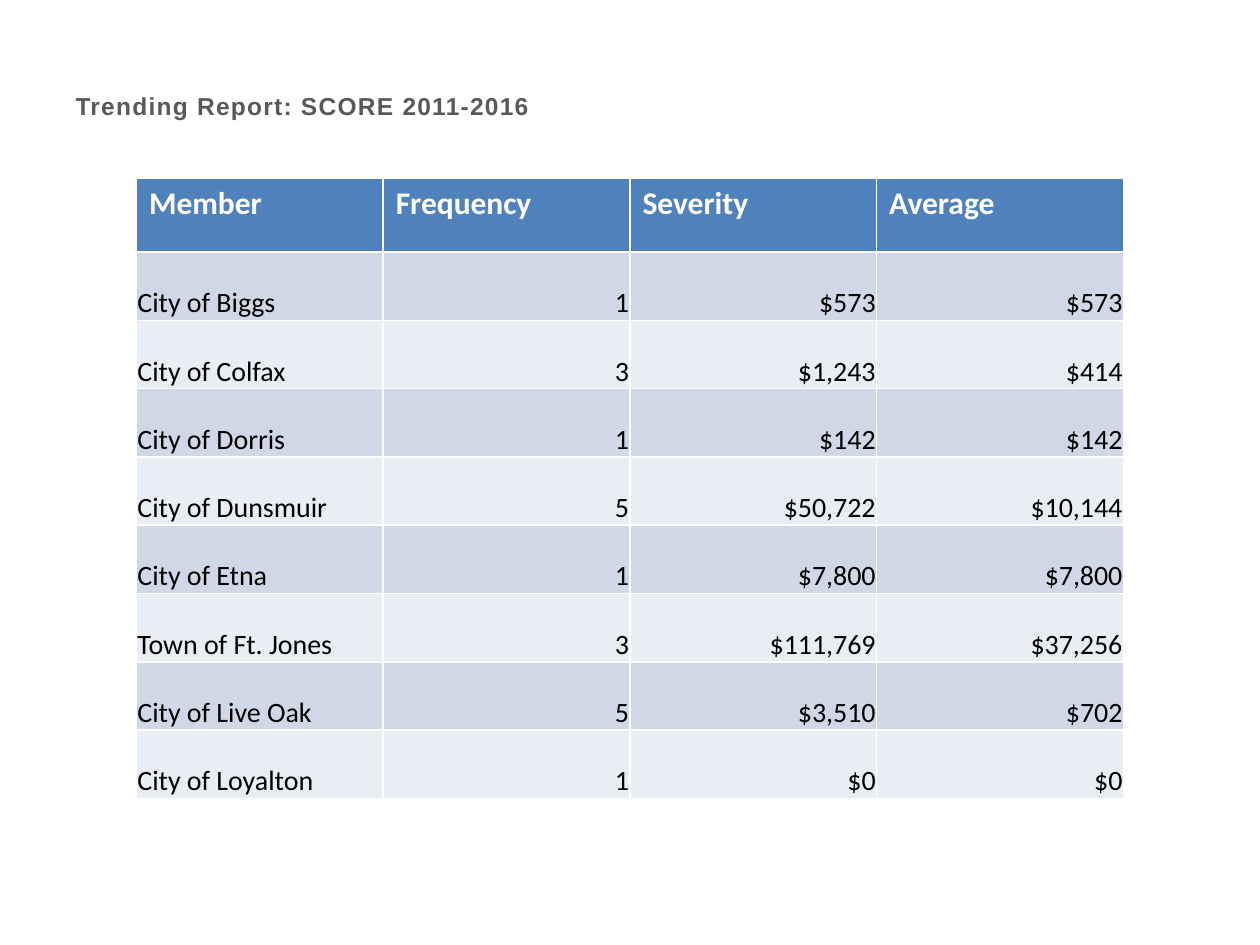
from dataclasses import dataclass

from pptx import Presentation
from pptx.dml.color import RGBColor
from pptx.enum.text import MSO_ANCHOR, PP_ALIGN
from pptx.util import Cm, Pt


@dataclass(frozen=True)
class Theme:
    title_font: str = "Arial"
    table_font: str = "Calibri"
    title_size: int = 14
    header_size: int = 18
    body_size: int = 16
    title_color: str = "595959"
    header_color: str = "FFFFFF"
    body_color: str = "000000"
    header_fill: str = "4F81BD"
    band_fills: tuple = ("D0D8E8", "E9EDF4")


THEME = Theme()
HEADERS = ("Member", "Frequency", "Severity", "Average")
MEMBERS = (
    ("City of Biggs", "1", "$573", "$573"),
    ("City of Colfax", "3", "$1,243", "$414"),
    ("City of Dorris", "1", "$142", "$142"),
    ("City of Dunsmuir", "5", "$50,722", "$10,144"),
    ("City of Etna", "1", "$7,800", "$7,800"),
    ("Town of Ft. Jones", "3", "$111,769", "$37,256"),
    ("City of Live Oak", "5", "$3,510", "$702"),
    ("City of Loyalton", "1", "$0", "$0"),
)


def style_paragraph(p, name, size, color, bold, align=PP_ALIGN.LEFT):
    p.alignment = align
    p.font.name = name
    p.font.size = Pt(size)
    p.font.bold = bold
    p.font.color.rgb = RGBColor.from_string(color)


def fill_cell(cell, text, fill, size, color, bold=False, align=PP_ALIGN.LEFT):
    cell.text = text
    cell.fill.solid()
    cell.fill.fore_color.rgb = RGBColor.from_string(fill)
    style_paragraph(cell.text_frame.paragraphs[0], THEME.table_font, size, color, bold, align)


def place_title(s, text, left, top, width, height):
    sp = s.shapes.title
    sp.left, sp.top, sp.width, sp.height = left, top, width, height
    tf = sp.text_frame
    tf.text = text
    tf.word_wrap = True
    tf.vertical_anchor = MSO_ANCHOR.TOP
    p = tf.paragraphs[0]
    style_paragraph(p, THEME.title_font, THEME.title_size, THEME.title_color, True)
    p.runs[0].font._element.set("spc", "70")


def place_claims_table(s, left, top, width, height, header_height):
    table = s.shapes.add_table(len(MEMBERS) + 1, len(HEADERS), left, top, width, height).table
    for row in table.rows:
        row.height = (height - header_height) // len(MEMBERS)
    table.rows[0].height = header_height

    for cell, text in zip(table.rows[0].cells, HEADERS):
        fill_cell(cell, text, THEME.header_fill, THEME.header_size, THEME.header_color, bold=True)

    for i, values in enumerate(MEMBERS):
        for j, text in enumerate(values):
            cell = table.cell(i + 1, j)
            fill_cell(cell, text, THEME.band_fills[i % 2], THEME.body_size, THEME.body_color,
                      align=PP_ALIGN.RIGHT if j else PP_ALIGN.LEFT)
            cell.vertical_anchor = MSO_ANCHOR.BOTTOM
            cell.margin_left = cell.margin_right = cell.margin_top = Cm(0.02)
            cell.margin_bottom = 0


def main():
    prs = Presentation()
    prs.slide_width, prs.slide_height = Cm(25.4), Cm(19.05)
    s = prs.slides.add_slide(prs.slide_layouts[5])
    place_title(s, "Trending Report: SCORE 2011-2016", Cm(1.27), Cm(1.7), Cm(22.86), Cm(0.94))
    place_claims_table(s, Cm(2.75), Cm(3.6), Cm(19.9), Cm(12.5), Cm(1.48))
    prs.save("out.pptx")


if __name__ == "__main__":
    main()
